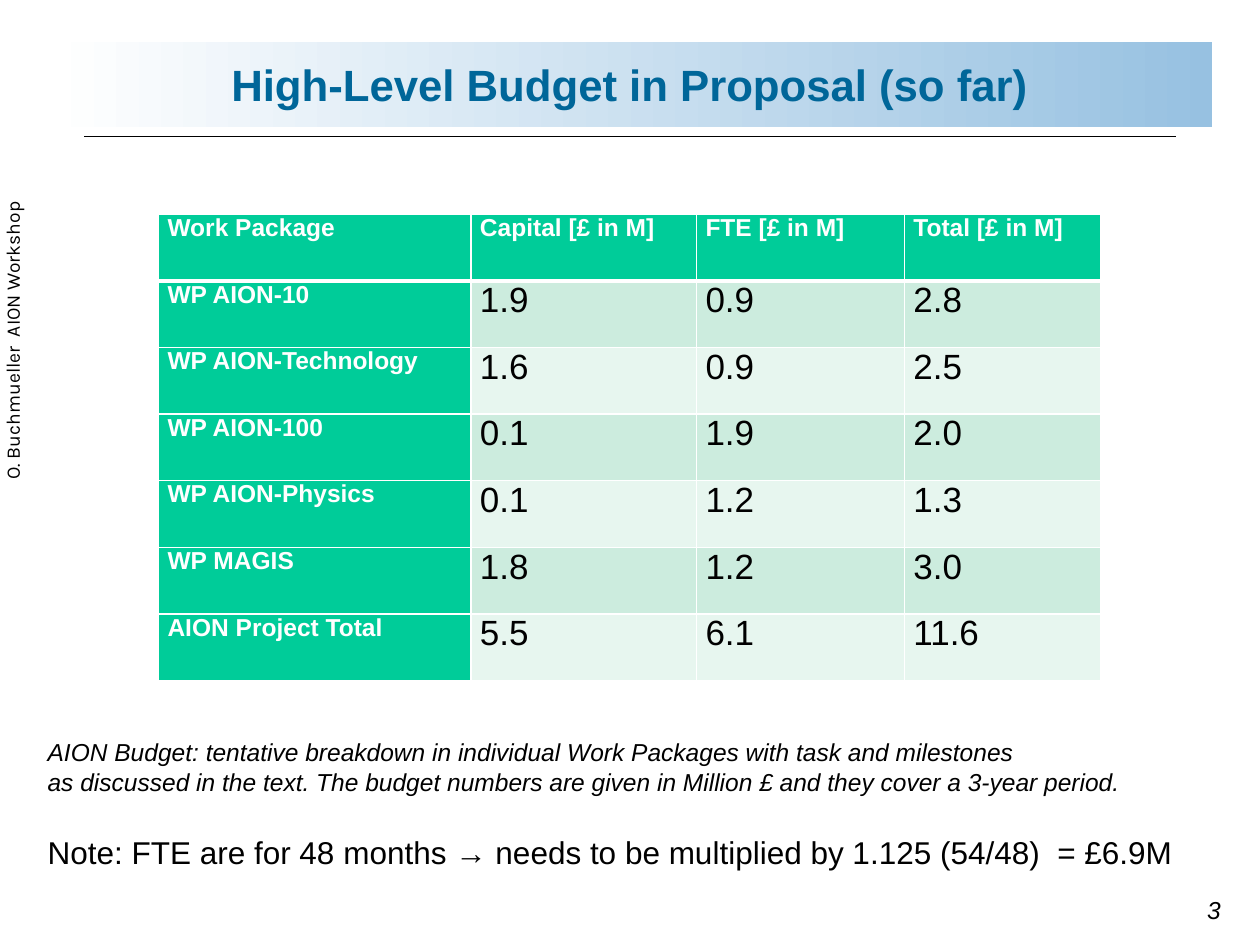
from dataclasses import dataclass, field

from lxml.etree import SubElement
from pptx import Presentation
from pptx.dml.color import RGBColor
from pptx.enum.shapes import MSO_CONNECTOR, MSO_SHAPE
from pptx.enum.text import MSO_ANCHOR, PP_ALIGN
from pptx.oxml.ns import qn
from pptx.util import Emu, Inches, Pt

SLIDE_WIDTH, SLIDE_HEIGHT = Inches(10), Inches(7.5)
GRID_COLUMNS, GRID_ROWS = 100, 75

COLORS = {
    "ink": "000000",
    "white": "FFFFFF",
    "title": "006699",
    "band_end": "97C1E1",
    "header": "00CC99",
    "odd_row": "CCECDE",
    "even_row": "E7F6EF",
}

BUDGET = [
    ("Work Package", "Capital [£ in M]", "FTE [£ in M]", "Total [£ in M]"),
    ("WP AION-10", "1.9", "0.9", "2.8"),
    ("WP AION-Technology", "1.6", "0.9", "2.5"),
    ("WP AION-100", "0.1", "1.9", "2.0"),
    ("WP AION-Physics", "0.1", "1.2", "1.3"),
    ("WP MAGIS", "1.8", "1.2", "3.0"),
    ("AION Project Total", "5.5", "6.1", "11.6"),
]
BUDGET_COLUMNS = (24.8, 17.9, 16.5, 15.6)
BUDGET_ROW = 5.29


@dataclass(frozen=True)
class Area:
    """A place on the slide, in grid columns and rows."""
    column: float
    row: float
    columns: float
    rows: float

    def lengths(self) -> tuple:
        return across(self.column), down(self.row), across(self.columns), down(self.rows)


@dataclass(frozen=True)
class TextStyle:
    size: float
    color: str = "ink"
    name: str = "Arial"
    bold: bool = False
    italic: bool = False
    alignment: PP_ALIGN = PP_ALIGN.LEFT


@dataclass(frozen=True)
class Note:
    area: Area
    lines: tuple
    style: TextStyle
    rotation: float = 0
    frame: dict = field(default_factory=dict)


MARGINS = {"margin_left": Inches(0.09), "margin_right": Inches(0.09),
           "margin_top": Inches(0.04), "margin_bottom": Inches(0.04)}
CELL_FORMAT = {"margin_left": Inches(0.07), "margin_right": Inches(0.07),
               "margin_top": 0, "margin_bottom": 0,
               "vertical_anchor": MSO_ANCHOR.TOP}

TITLE_STYLE = TextStyle(25, "title", bold=True, alignment=PP_ALIGN.CENTER)
LABEL_STYLE = TextStyle(14, "white", bold=True, alignment=PP_ALIGN.JUSTIFY)
VALUE_STYLE = TextStyle(20, alignment=PP_ALIGN.JUSTIFY)

NOTES = [
    Note(Area(-17.3, 17.4, 39.4, 5.5), ("O. Buchmueller  AION Workshop",),
         TextStyle(11, name="Karla"), 270, MARGINS | {"margin_left": Inches(0.18)}),
    Note(Area(94.9, 70.6, 5, 3.8), ("3",), TextStyle(14, italic=True), frame=MARGINS),
    Note(Area(2.8, 58, 94.4, 5.7),
         ("AION Budget: tentative breakdown in individual Work Packages with task and milestones",
          "as discussed in the text. The budget numbers are given in Million £ and they cover a 3-year period."),
         TextStyle(14, italic=True), frame={"vertical_anchor": MSO_ANCHOR.MIDDLE}),
    Note(Area(2.8, 65.6, 92.8, 4),
         ("Note: FTE are for 48 months → needs to be multiplied by 1.125 (54/48)  = £6.9M",),
         TextStyle(18), frame={"word_wrap": False}),
]


def across(columns: float) -> Emu:
    return Emu(round(SLIDE_WIDTH * columns / GRID_COLUMNS))


def down(rows: float) -> Emu:
    return Emu(round(SLIDE_HEIGHT * rows / GRID_ROWS))


def rgb(color: str) -> RGBColor:
    return RGBColor.from_string(COLORS[color])


def apply(target, values: dict) -> None:
    for attribute, value in values.items():
        setattr(target, attribute, value)


def write(frame, lines: tuple, style: TextStyle) -> None:
    for index, line in enumerate(lines):
        paragraph = frame.paragraphs[0] if index == 0 else frame.add_paragraph()
        paragraph.alignment = style.alignment
        run = paragraph.add_run()
        run.text = line
        apply(run.font, {"size": Pt(style.size), "name": style.name,
                         "bold": style.bold, "italic": style.italic})
        run.font.color.rgb = rgb(style.color)


def draw_title_band(slide) -> None:
    band = slide.shapes.add_shape(MSO_SHAPE.RECTANGLE, *Area(3.9, 3.3, 92.3, 6.8).lengths())
    band.shadow.inherit = False
    band.line.fill.background()
    band.fill.gradient()
    band.fill.gradient_angle = 0
    for stop, color, position in zip(band.fill.gradient_stops, ("white", "band_end"), (0, 1)):
        stop.color.rgb = rgb(color)
        stop.position = position

    rule = slide.shapes.add_connector(MSO_CONNECTOR.STRAIGHT, across(6.7), down(10.8),
                                      across(93.3), down(10.8))
    rule.line.color.rgb = rgb("ink")
    rule.line.width = Pt(0.25)
    SubElement(rule._element.spPr, qn("a:effectLst"))


def draw_title(slide, text: str) -> None:
    title = slide.shapes.title
    slide.shapes._spTree.append(title._element)  # in front of the band
    left, top, width, height = Area(6.1, 4.2, 87.7, 5).lengths()
    apply(title, {"left": left, "top": top, "width": width, "height": height})
    apply(title.text_frame, MARGINS | {"vertical_anchor": MSO_ANCHOR.MIDDLE, "word_wrap": True})
    write(title.text_frame, (text,), TITLE_STYLE)


def draw_note(slide, note: Note) -> None:
    box = slide.shapes.add_textbox(*note.area.lengths())
    box.rotation = note.rotation
    apply(box.text_frame, {"word_wrap": True} | note.frame)
    write(box.text_frame, note.lines, note.style)


def set_borders(cell, widths: dict) -> None:
    """Add white borders; call before filling, as the schema puts lines first."""
    properties = cell._tc.get_or_add_tcPr()
    for side, points in widths.items():
        line = SubElement(properties, qn(f"a:ln{side}"), w=str(Pt(points)))
        SubElement(SubElement(line, qn("a:solidFill")), qn("a:srgbClr"), val=COLORS["white"])


def draw_budget(slide) -> None:
    area = Area(12.6, 17, sum(BUDGET_COLUMNS), BUDGET_ROW * len(BUDGET))
    table = slide.shapes.add_table(len(BUDGET), len(BUDGET_COLUMNS), *area.lengths()).table
    for column, width in zip(table.columns, BUDGET_COLUMNS):
        column.width = across(width)
    for row_number, entries in enumerate(BUDGET):
        table.rows[row_number].height = down(BUDGET_ROW)
        for column_number, entry in enumerate(entries):
            cell = table.cell(row_number, column_number)
            is_label = row_number == 0 or column_number == 0
            band = "odd_row" if row_number % 2 else "even_row"
            apply(cell, CELL_FORMAT)
            set_borders(cell, {"L": 1, "R": 1, "T": 3 if row_number == 1 else 1,
                               "B": 3 if row_number == 0 else 1})
            cell.fill.solid()
            cell.fill.fore_color.rgb = rgb("header" if is_label else band)
            write(cell.text_frame, (entry,), LABEL_STYLE if is_label else VALUE_STYLE)


def main() -> None:
    presentation = Presentation()
    apply(presentation, {"slide_width": SLIDE_WIDTH, "slide_height": SLIDE_HEIGHT})
    slide = presentation.slides.add_slide(presentation.slide_layouts.get_by_name("Title Only"))
    draw_title_band(slide)
    draw_title(slide, "High-Level Budget in Proposal (so far)")
    draw_budget(slide)
    for note in NOTES:
        draw_note(slide, note)
    presentation.save("out.pptx")


if __name__ == "__main__":
    main()
